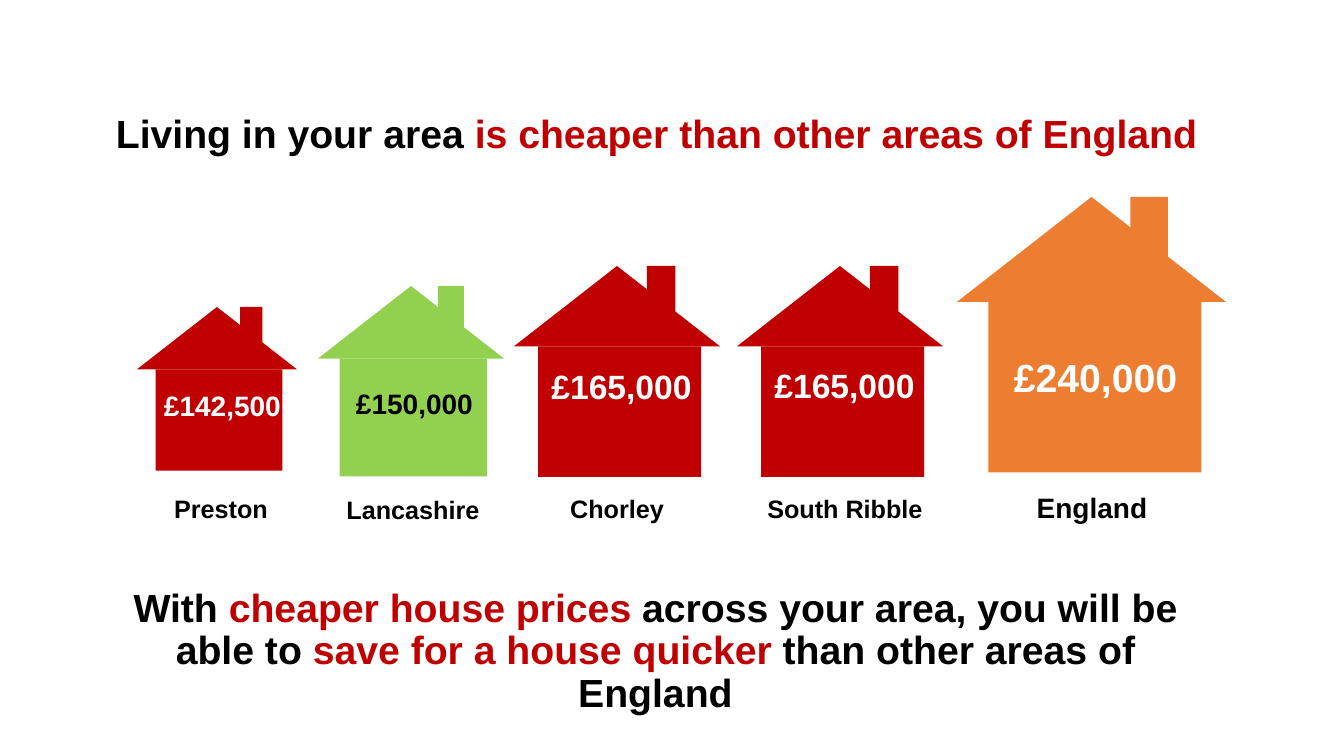
from pptx import Presentation
from pptx.dml.color import RGBColor
from pptx.enum.shapes import MSO_SHAPE as Shape
from pptx.enum.text import MSO_ANCHOR as Anchor, PP_ALIGN as Align

BLACK, WHITE, RED, GREEN, ORANGE = "000000", "FFFFFF", "C00000", "92D050", "ED7D31"
TITLE = [("Living in your area ", BLACK), ("is cheaper than other areas of England", RED)]
CLOSING = [
    ("With ", BLACK),
    ("cheaper house prices ", RED),
    ("across your area, you will be able to ", BLACK),
    ("save for a house quicker", RED),
    (" than other areas of England", BLACK),
]
HOUSES = [
    dict(roof=(137, 307, 160), fill=RED, name="Preston", tag=(133, 488, 176, 40), size=18,
         price="£142,500", cost=(137, 384, 171, 44), points=20, ink=WHITE),
    dict(roof=(318, 286, 186), fill=GREEN, name="Lancashire", tag=(335, 489, 156, 40), size=18,
         price="£150,000", cost=(329, 382, 171, 44), points=20, ink=BLACK),
    dict(roof=(514, 266, 206), fill=RED, name="Chorley", tag=(523, 488, 188, 40), size=18,
         price="£165,000", cost=(536, 361, 171, 50), points=24, ink=WHITE),
    dict(roof=(737, 266, 206), fill=RED, name="South Ribble", tag=(751, 488, 188, 40), size=18,
         price="£165,000", cost=(759, 360, 171, 50), points=24, ink=WHITE),
    dict(roof=(957, 197, 269), fill=ORANGE, name="England", tag=(998, 486, 188, 44), size=20,
         price="£240,000", cost=(999, 348, 193, 57), points=28, ink=WHITE),
]
PX = 914400 / 100.8


def emu(*px):
    return [round(n * PX) for n in px]


def rgb(code):
    return RGBColor.from_string(code)


def paint(shape, fill):
    shape.shadow.inherit = False
    shape.fill.solid()
    shape.fill.fore_color.rgb = rgb(fill)
    shape.line.fill.background()


def write(runs, box, size=28, align=Align.CENTER, anchor=Anchor.TOP, space=1.0):
    frame = slide.shapes.add_textbox(*emu(*box)).text_frame
    frame.word_wrap = True
    frame.vertical_anchor = anchor
    para = frame.paragraphs[0]
    para.alignment = align
    para.line_spacing = space
    for text, ink in runs:
        run = para.add_run()
        run.text = text
        font = run.font
        font.name, font.size, font.bold = "Arial", size * 12700, True
        font.color.rgb = rgb(ink)


def build(left, top, wide, fill):
    eaves = top + 0.39 * wide
    wall = (left + 0.117 * wide, eaves, 0.792 * wide, 0.634 * wide)
    stack = (left + 0.645 * wide, top, 0.139 * wide, 0.257 * wide)
    for box in (wall, stack):
        paint(slide.shapes.add_shape(Shape.RECTANGLE, *emu(*box)), fill)
    pen = slide.shapes.build_freeform(*emu(left + wide / 2, top))
    pen.add_line_segments([emu(left, eaves), emu(left + wide, eaves)], close=True)
    paint(pen.convert_to_shape(), fill)


deck = Presentation()
deck.slide_width, deck.slide_height = emu(1344, 756)
slide = deck.slides.add_slide(deck.slide_layouts[6])

write(TITLE, (106, 95, 1159, 82), align=Align.LEFT, anchor=Anchor.MIDDLE, space=0.9)
for house in HOUSES:
    build(*house["roof"], house["fill"])
    write([(house["price"], house["ink"])], house["cost"], size=house["points"])
    write([(house["name"], BLACK)], house["tag"], size=house["size"])
write(CLOSING, (113, 611, 1085, 82), anchor=Anchor.MIDDLE, space=0.9)

deck.save("out.pptx")
